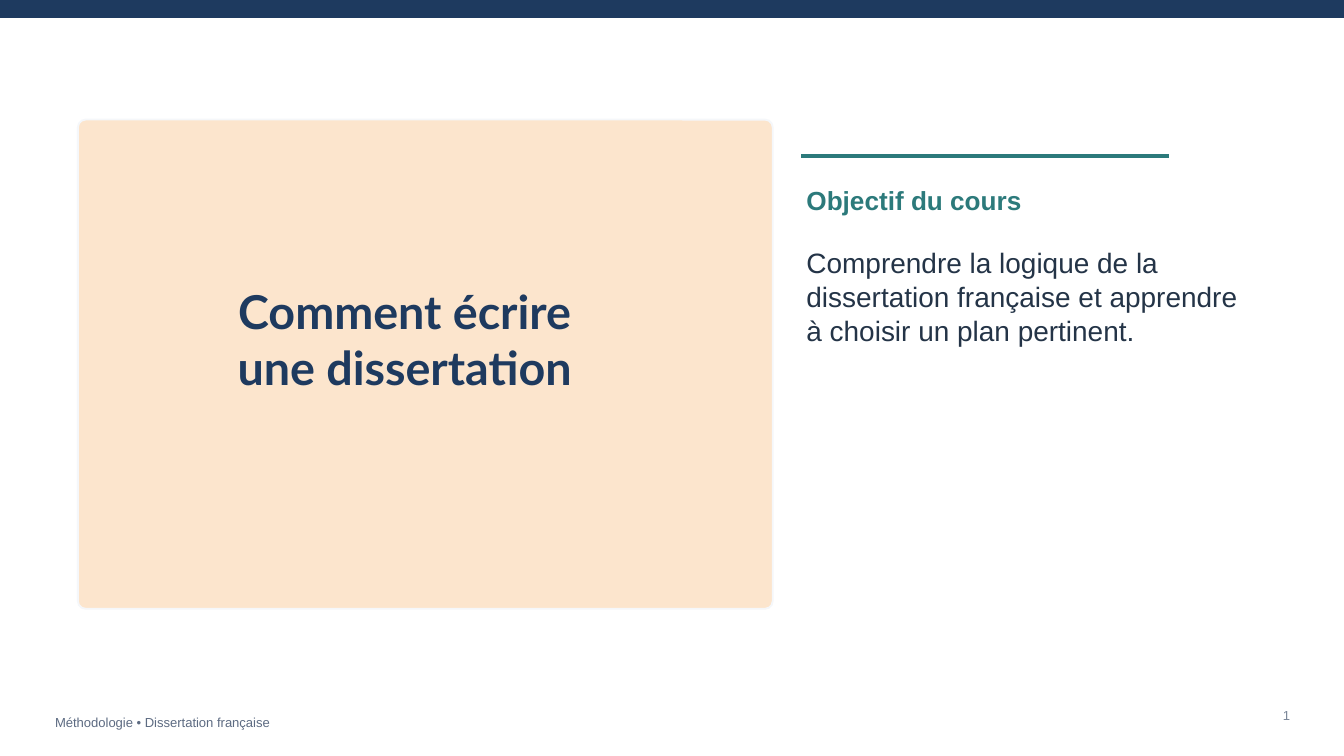
from pptx import Presentation
from pptx.dml.color import RGBColor
from pptx.enum.shapes import MSO_CONNECTOR, MSO_SHAPE
from pptx.enum.text import MSO_ANCHOR, MSO_AUTO_SIZE, PP_ALIGN
from pptx.oxml.ns import qn
from pptx.util import Inches, Pt
from lxml import etree

# Content
TITLE = ["Comment écrire", "une dissertation"]
HEADING = ["Objectif du cours"]
OBJECTIVE = ["Comprendre la logique de la dissertation française et apprendre",
             "à choisir un plan pertinent."]
FOOTER = ["Méthodologie • Dissertation française"]
PAGE_NUMBER = ["1"]

# Layout in inches (16:9 slide): left, top, width, height
WIDTH = 10
HEIGHT = WIDTH * 9 / 16
TEXT_LEFT = 6
BAR_BOX = (0, 0, WIDTH, 0.13)
CARD_BOX = (0.58, 0.89, 5.17, 3.64)
TITLE_BOX = (0.95, 1.95, 4.12, 1.14)
HEADING_BOX = (TEXT_LEFT, 1.36, 2.02, 0.26)
OBJECTIVE_BOX = (TEXT_LEFT, 1.59, 3.42, 1.23)
FOOTER_BOX = (0.41, 5.29, 3.15, 0.17)
NUMBER_BOX = (9.34, 5.24, 0.26, 0.17)
RULE_LEFT, RULE_RIGHT, RULE_TOP = 5.96, 8.7, 1.16

NAVY, TEAL = "1E3A5F", "2C7A7B"


def color(value):
    return RGBColor.from_string(value)


def add_panel(kind, box, fill, line):
    shape = slide.shapes.add_shape(kind, *map(Inches, box))
    shape.shadow.inherit = False
    shape.fill.solid()
    shape.fill.fore_color.rgb = color(fill)
    shape.line.color.rgb = color(line)
    shape.line.width = Pt(1)
    return shape


def write(shape, box, lines, size, ink, font="Arial", bold=False,
          align=PP_ALIGN.LEFT):
    shape.left, shape.top, shape.width, shape.height = map(Inches, box)
    frame = shape.text_frame
    frame.word_wrap = True
    frame.auto_size = MSO_AUTO_SIZE.NONE
    frame.vertical_anchor = MSO_ANCHOR.MIDDLE
    frame.margin_left = frame.margin_top = 0
    frame.margin_right = frame.margin_bottom = 0
    frame.text = "\n".join(lines)
    for paragraph in frame.paragraphs:
        # No bullet or hanging indent
        properties = paragraph._p.get_or_add_pPr()
        properties.set("marL", "0")
        properties.set("indent", "0")
        etree.SubElement(properties, qn("a:buNone"))
        paragraph.alignment = align
        paragraph.space_before = Pt(0)
        paragraph.font.name = font
        paragraph.font.size = Pt(size)
        paragraph.font.bold = bold
        paragraph.font.color.rgb = color(ink)


def add_text(box, *args, **options):
    write(slide.shapes.add_textbox(*map(Inches, box)), box, *args, **options)


presentation = Presentation()
presentation.slide_width, presentation.slide_height = Inches(WIDTH), Inches(HEIGHT)
slide = presentation.slides.add_slide(presentation.slide_layouts[1])
title, body = slide.placeholders

# Top bar and title card, behind the placeholders
add_panel(MSO_SHAPE.RECTANGLE, BAR_BOX, NAVY, NAVY)
card = add_panel(MSO_SHAPE.ROUNDED_RECTANGLE, CARD_BOX, "FCE5CD", "F5F7FA")
card.adjustments[0] = 0.016
for placeholder in (title, body):
    slide.shapes._spTree.append(placeholder._element)

# Title
write(title, TITLE_BOX, TITLE, 25, NAVY, font="Lato", bold=True,
      align=PP_ALIGN.CENTER)

# Course objective with its rule
rule = slide.shapes.add_connector(
    MSO_CONNECTOR.STRAIGHT, Inches(RULE_LEFT), Inches(RULE_TOP),
    Inches(RULE_RIGHT), Inches(RULE_TOP))
rule.line.color.rgb = color(TEAL)
rule.line.width = Pt(2.25)
etree.SubElement(rule._element.spPr, qn("a:effectLst"))
add_text(HEADING_BOX, HEADING, 14, TEAL, bold=True)
write(body, OBJECTIVE_BOX, OBJECTIVE, 15, "243447")

# Footer
add_text(FOOTER_BOX, FOOTER, 7, "5D6B82")
add_text(NUMBER_BOX, PAGE_NUMBER, 7, "7A8698", align=PP_ALIGN.RIGHT)

presentation.save("out.pptx")
